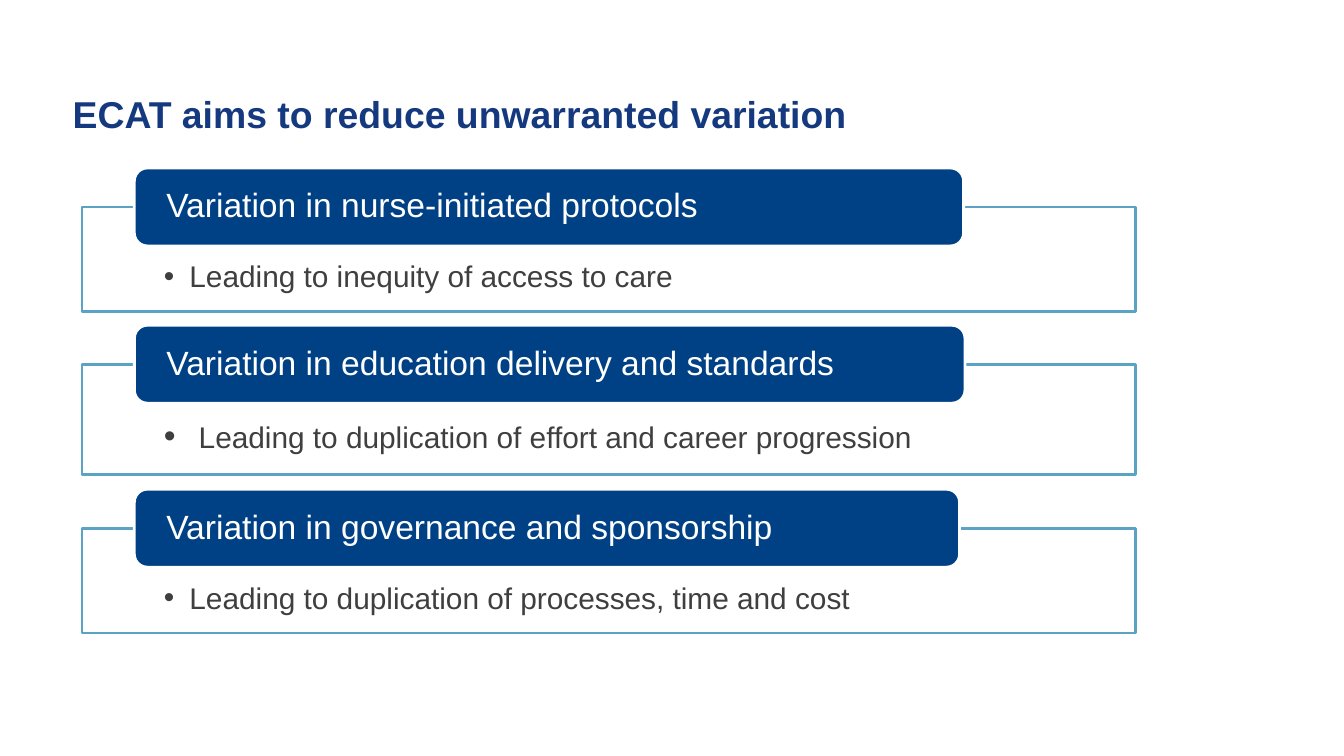
from pptx import Presentation
from pptx.dml.color import RGBColor
from pptx.enum.shapes import MSO_SHAPE
from pptx.enum.text import MSO_ANCHOR, PP_ALIGN
from pptx.oxml.ns import qn
from pptx.util import Inches, Pt
from lxml.etree import SubElement

# Content: heading, heading width, frame top, frame height, bullet runs (text, size role)
TITLE = "ECAT aims to reduce unwarranted variation"
VARIATIONS = [
    ("Variation in nurse-initiated protocols", 6.17, 1.54, 0.78,
     [("Leading to inequity of access to care", "body")]),
    ("Variation in education delivery and standards", 6.18, 2.71, 0.82,
     [(" ", "heading"),
      ("Leading to duplication of effort and career progression", "body")]),
    ("Variation in governance and sponsorship", 6.14, 3.93, 0.78,
     [("Leading to duplication of processes, time and cost", "body")]),
]

THEME = {
    "font": "Arial",
    "colors": {"title": "15397F", "heading": "FFFFFF", "body": "3F3F3F",
               "bar": "004185", "frame": "5AA3C4", "paper": "FFFFFF"},
    "sizes": {"title": 20, "heading": 18, "body": 16},
}

# Layout in inches, on a 16:9 slide
SLIDE_WIDTH = 10
SLIDE_HEIGHT = SLIDE_WIDTH * 9 / 16
FRAME_LEFT, FRAME_WIDTH = 0.61, 7.84
BAR_LEFT, BAR_HEIGHT = 1, 0.58
HANGING_INDENT = 0.19


def color(role):
    return RGBColor.from_string(THEME["colors"][role])


def set_frame(text_frame, anchor, margins):
    sides = ("margin_left", "margin_top", "margin_right", "margin_bottom")
    values = {side: Inches(margin) for side, margin in zip(sides, margins)}
    values.update(word_wrap=True, vertical_anchor=anchor)
    for name, value in values.items():
        setattr(text_frame, name, value)


def add_run(paragraph, text, size_role, color_role, bold=False):
    run = paragraph.add_run()
    run.text = text
    values = {"name": THEME["font"], "size": Pt(THEME["sizes"][size_role]), "bold": bold}
    for name, value in values.items():
        setattr(run.font, name, value)
    run.font.color.rgb = color(color_role)


def add_panel(slide, preset, box, fill_role, line_role, anchor, margins):
    panel = slide.shapes.add_shape(preset, *map(Inches, box))
    panel.shadow.inherit = False
    panel.fill.solid()
    panel.fill.fore_color.rgb = color(fill_role)
    panel.line.color.rgb = color(line_role)
    panel.line.width = Pt(1.5)
    set_frame(panel.text_frame, anchor, margins)
    paragraph = panel.text_frame.paragraphs[0]
    paragraph.alignment = PP_ALIGN.LEFT
    paragraph.line_spacing = 0.9
    return panel, paragraph


def add_bullet(paragraph):
    paragraph.level = 1
    properties = paragraph._p.get_or_add_pPr()
    properties.set("marL", str(Inches(HANGING_INDENT)))
    properties.set("indent", str(-Inches(HANGING_INDENT)))
    # The bullet takes the colour and size of the first run
    SubElement(properties, qn("a:buFont")).set("typeface", THEME["font"])
    SubElement(properties, qn("a:buChar")).set("char", "•")


def set_opacity(panel, percent):
    fill_color = panel._element.spPr.find(qn("a:solidFill"))[0]
    SubElement(fill_color, qn("a:alpha")).set("val", str(percent * 1000))


def main():
    presentation = Presentation()
    presentation.slide_width = Inches(SLIDE_WIDTH)
    presentation.slide_height = Inches(SLIDE_HEIGHT)
    slide = presentation.slides.add_slide(presentation.slide_layouts[5])

    # Title
    title = slide.shapes.title
    title.left, title.top, title.width, title.height = map(Inches, (0.54, 0.67, 8.19, 0.35))
    set_frame(title.text_frame, MSO_ANCHOR.MIDDLE, (0, 0, 0, 0))
    title_line = title.text_frame.paragraphs[0]
    title_line.alignment = PP_ALIGN.LEFT
    add_run(title_line, TITLE, "title", "title", bold=True)

    # Framed bullets, each with a heading bar centred on its top edge
    for heading, bar_width, frame_top, frame_height, bullet_runs in VARIATIONS:
        frame, bullet = add_panel(
            slide, MSO_SHAPE.RECTANGLE, (FRAME_LEFT, frame_top, FRAME_WIDTH, frame_height),
            "paper", "frame", MSO_ANCHOR.TOP, (0.61, 0.41, 0.61, 0.12))
        set_opacity(frame, 90)
        add_bullet(bullet)
        for text, size_role in bullet_runs:
            add_run(bullet, text, size_role, "body")

        _, heading_line = add_panel(
            slide, MSO_SHAPE.ROUNDED_RECTANGLE,
            (BAR_LEFT, frame_top - BAR_HEIGHT / 2, bar_width, BAR_HEIGHT),
            "bar", "paper", MSO_ANCHOR.MIDDLE, (0.21, 0, 0.21, 0))
        add_run(heading_line, heading, "heading", "heading")

    presentation.save("out.pptx")


if __name__ == "__main__":
    main()
